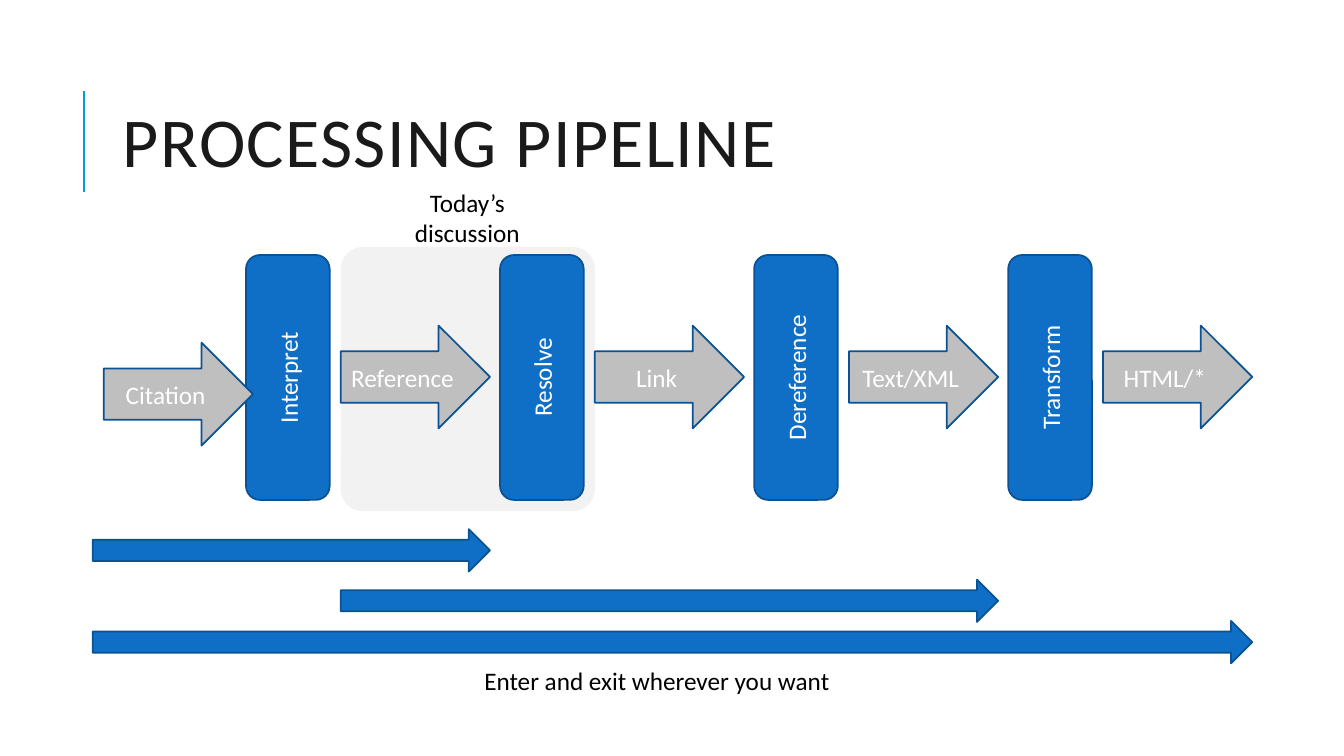
"""Build the processing pipeline slide."""
from pptx import Presentation
from pptx import util as u
from pptx.dml.color import RGBColor
from pptx.enum import shapes, text
from pptx.oxml.ns import qn
from lxml import etree

PX = 9144
BLUE = RGBColor(0x0F, 0x6F, 0xC6)
EDGE = RGBColor(0x0B, 0x52, 0x92)
ACCENT = RGBColor(0x00, 0x9D, 0xD9)
GREY = RGBColor(0xBF, 0xBF, 0xBF)
PALE = RGBColor(0xF2, 0xF2, 0xF2)
INK = RGBColor(0x1A, 0x1A, 0x1A)
BLACK = RGBColor(0, 0, 0)
WHITE = RGBColor(0xFF, 0xFF, 0xFF)
ARROW = shapes.MSO_SHAPE.RIGHT_ARROW
ROUNDED = shapes.MSO_SHAPE.ROUNDED_RECTANGLE
STEP = 252

prs = Presentation()
prs.slide_width, prs.slide_height = 1333 * PX, 750 * PX
s = prs.slides.add_slide(prs.slide_layouts[6])


def add_block(kind, x, y, w, h, fill, edge=EDGE):
    sp = s.shapes.add_shape(kind, x * PX, y * PX, w * PX, h * PX)
    sp.shadow.inherit = False
    sp.fill.solid()
    sp.fill.fore_color.rgb = fill
    if edge is None:
        sp.line.fill.background()
    else:
        sp.line.color.rgb = edge
        sp.line.width = u.Pt(1.25)
    return sp


def write(sp, words, color, size=18, align=text.PP_ALIGN.CENTER):
    tf = sp.text_frame
    tf.text = words
    tf.word_wrap = True
    p = tf.paragraphs[0]
    p.alignment = align
    r = p.runs[0]
    r.font.name = "Calibri"
    r.font.size = u.Pt(size)
    r.font.color.rgb = color
    return tf


rule = s.shapes.add_connector(shapes.MSO_CONNECTOR.STRAIGHT, 83 * PX, 190 * PX, 83 * PX, 90 * PX)
rule.line.color.rgb = ACCENT
rule.line.width = u.Pt(1.5)
etree.SubElement(rule._element.spPr, qn("a:effectLst"))

focus = add_block(ROUNDED, 338, 245, 252, 262, PALE, None)
focus.adjustments[0] = 0.087

title = s.shapes.add_textbox(112 * PX, 64 * PX, 1063 * PX, 164 * PX)
tf = write(title, "PROCESSING PIPELINE", INK, 50, text.PP_ALIGN.LEFT)
tf.vertical_anchor = text.MSO_ANCHOR.MIDDLE
tf.paragraphs[0].line_spacing = 0.8
tf.paragraphs[0].runs[0].font._element.set("spc", "100")

for i, stage in enumerate(["Interpret", "Resolve", "Dereference", "Transform"]):
    sp = add_block(ROUNDED, 244 + i * STEP, 253, 83, 243, BLUE)
    tf = write(sp, stage, WHITE)
    tf.vertical_anchor = text.MSO_ANCHOR.MIDDLE
    tf._txBody.bodyPr.set("vert", "vert270")

products = [("Citation", 103, 340)]
for i, product in enumerate(["Reference", "Link", "Text/XML", "HTML/*"]):
    products.append((product, 338 + i * STEP, 323))
for product, x, y in products:
    tf = write(add_block(ARROW, x, y, 148, 102, GREY), product, WHITE)
    tf.vertical_anchor = text.MSO_ANCHOR.MIDDLE
    tf.margin_left = tf.margin_right = 0

for x, y, w in [(92, 525, 394), (338, 575, 652), (92, 616, 1150)]:
    add_block(ARROW, x, y, w, 42, BLUE)

captions = [
    ("Enter and exit wherever you want", 412, 655, 479, 40),
    ("Today’s discussion", 367, 181, 193, 71),
]
for words, x, y, w, h in captions:
    tf = write(s.shapes.add_textbox(x * PX, y * PX, w * PX, h * PX), words, BLACK)
    tf.auto_size = text.MSO_AUTO_SIZE.SHAPE_TO_FIT_TEXT

prs.save("out.pptx")
